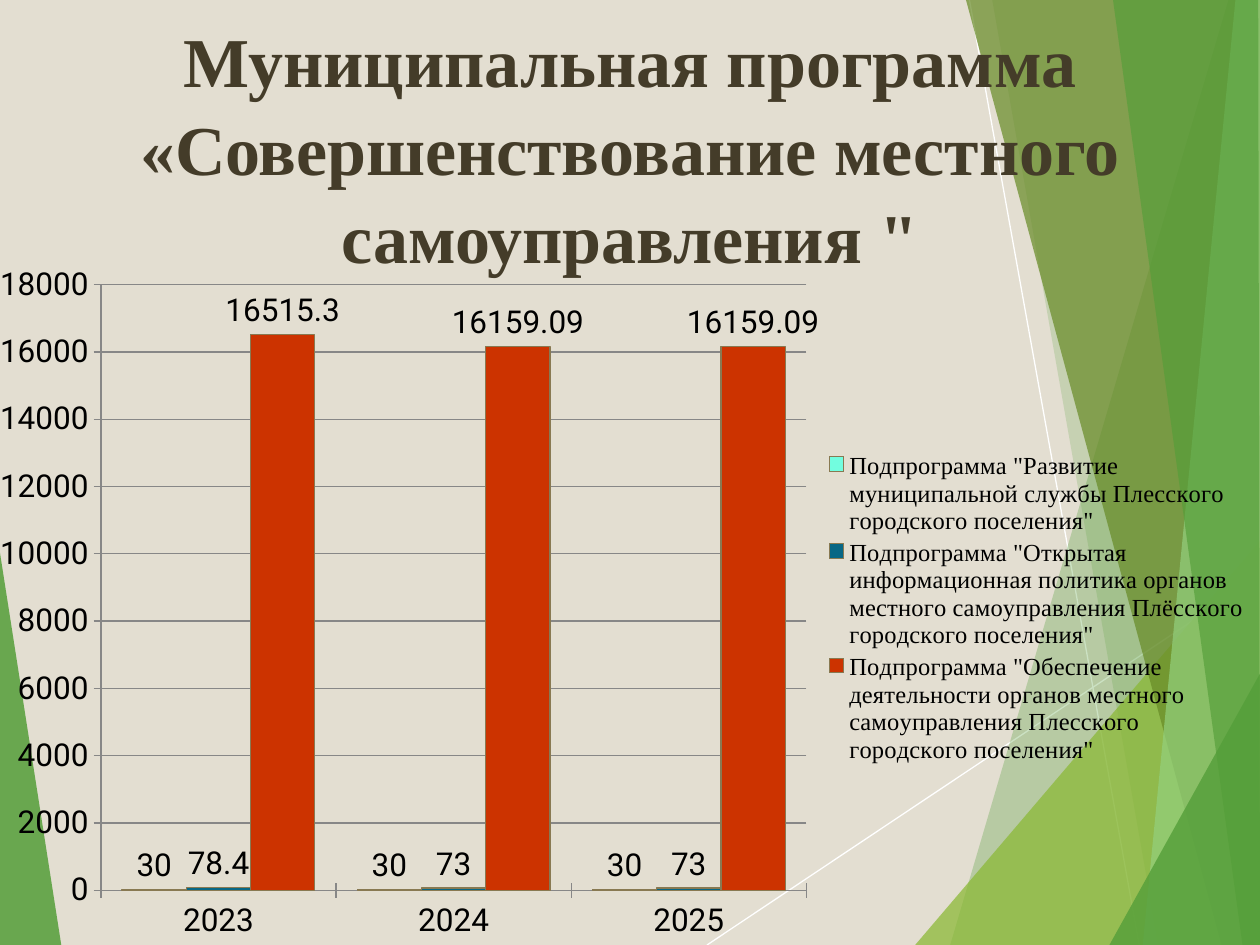
from dataclasses import dataclass

from lxml.etree import SubElement
from pptx import Presentation
from pptx.chart.data import CategoryChartData
from pptx.dml.color import RGBColor
from pptx.enum.chart import XL_CHART_TYPE, XL_LABEL_POSITION, XL_LEGEND_POSITION, XL_TICK_MARK
from pptx.enum.shapes import MSO_CONNECTOR
from pptx.enum.text import MSO_ANCHOR, PP_ALIGN
from pptx.oxml import parse_xml
from pptx.oxml.ns import nsdecls, qn
from pptx.util import Pt


@dataclass(frozen=True)
class Theme:
    background: str = "E3DED1"
    white: str = "FFFFFF"
    green: str = "549E39"
    lime: str = "8AB833"
    olive: str = "678A26"
    light_green: str = "93D07D"
    title: str = "443C29"
    text: str = "000000"
    axis: str = "878787"
    outline: str = "887952"
    series: tuple = ("72FDDF", "076785", "CC3300")
    serif: str = "Times New Roman"
    sans: str = "Roboto"
    title_size: int = 40
    chart_size: int = 18
    legend_size: int = 14


THEME = Theme()
WIDTH, HEIGHT = 720, 540

RAYS = [((404, 540), (720, 329)), ((554, 0), (651, 540))]

# Corner points, colour, opacity in percent
FACETS = [
    ([(0, 316), (35, 540), (0, 540)], THEME.green, 85),
    ([(702, 0), (543, 540), (720, 540), (720, 0)], THEME.green, 30),
    ([(567, 0), (662, 540), (720, 540), (720, 0)], THEME.green, 20),
    ([(523, 540), (720, 309), (720, 540)], THEME.lime, 72),
    ([(552, 0), (698, 540), (720, 540), (720, 0)], THEME.olive, 70),
    ([(706, 0), (653, 540), (720, 540), (720, 0)], THEME.light_green, 70),
    ([(636, 0), (710, 540), (720, 540), (719, 0)], THEME.green, 65),
    ([(634, 540), (720, 385), (720, 540)], THEME.green, 80),
]

YEARS = ["2023", "2024", "2025"]
SUBPROGRAMS = [
    ('Подпрограмма "Развитие муниципальной службы Плесского городского поселения"',
     (30, 30, 30)),
    ('Подпрограмма "Открытая информационная политика органов местного '
     'самоуправления Плёсского городского поселения"', (78.4, 73, 73)),
    ('Подпрограмма "Обеспечение деятельности органов местного самоуправления '
     'Плесского городского поселения"', (16515.3, 16159.09, 16159.09)),
]


def color(value):
    return RGBColor.from_string(value)


def style_font(font, name, size, value, bold=False):
    font.name = name
    font.size = Pt(size)
    font.bold = bold
    font.color.rgb = color(value)


def style_line(line, value):
    line.color.rgb = color(value)
    line.width = Pt(0.75)


def add_ray(slide, start, end):
    ray = slide.shapes.add_connector(
        MSO_CONNECTOR.STRAIGHT, *(Pt(value) for value in start + end))
    style_line(ray.line, THEME.white)
    SubElement(ray._element.spPr, qn("a:effectLst"))


def add_facet(slide, points, fill, opacity):
    builder = slide.shapes.build_freeform(*points[0], scale=Pt(1))
    builder.add_line_segments(points[1:], close=True)
    facet = builder.convert_to_shape()
    facet.shadow.inherit = False
    facet.fill.solid()
    facet.fill.fore_color.rgb = color(fill)
    facet.line.fill.background()
    color_element = facet._element.spPr.find(".//" + qn("a:srgbClr"))
    SubElement(color_element, qn("a:alpha"), val=str(opacity * 1000))


def add_title(slide, text):
    box = slide.shapes.add_textbox(Pt(14), Pt(9), Pt(692), Pt(148))
    text_frame = box.text_frame
    text_frame.word_wrap = True
    text_frame.vertical_anchor = MSO_ANCHOR.MIDDLE
    text_frame.text = text
    paragraph = text_frame.paragraphs[0]
    paragraph.alignment = PP_ALIGN.CENTER
    paragraph.line_spacing = 1.05
    for run in paragraph.runs:
        style_font(run.font, THEME.serif, THEME.title_size, THEME.title, bold=True)


def manual_layout(x, y, width, height, inner=False):
    """Return a c:layout element; values are fractions of the chart."""
    target = '<c:layoutTarget val="inner"/>' if inner else ""
    return parse_xml(
        f'<c:layout {nsdecls("c")}><c:manualLayout>{target}'
        '<c:xMode val="edge"/><c:yMode val="edge"/>'
        f'<c:x val="{x}"/><c:y val="{y}"/><c:w val="{width}"/><c:h val="{height}"/>'
        '</c:manualLayout></c:layout>')


def style_axis(axis):
    axis.major_tick_mark = XL_TICK_MARK.CROSS
    axis.minor_tick_mark = XL_TICK_MARK.NONE
    style_line(axis.format.line, THEME.axis)


def style_series(series, fill):
    series.format.fill.solid()
    series.format.fill.fore_color.rgb = color(fill)
    style_line(series.format.line, THEME.outline)
    labels = series.data_labels
    labels.show_value = True
    labels.position = XL_LABEL_POSITION.OUTSIDE_END


def add_legend(chart):
    chart.has_legend = True
    legend = chart.legend
    legend.position = XL_LEGEND_POSITION.RIGHT
    legend.include_in_layout = False
    style_font(legend.font, THEME.serif, THEME.legend_size, THEME.text)
    element = legend._element
    for layout in element.findall(qn("c:layout")):
        element.remove(layout)
    element.find(qn("c:legendPos")).addnext(manual_layout(0.67, 0.27, 0.33, 0.47))


def add_budget_chart(slide):
    data = CategoryChartData()
    data.categories = YEARS
    for name, values in SUBPROGRAMS:
        data.add_series(name, values)
    chart = slide.shapes.add_chart(
        XL_CHART_TYPE.COLUMN_CLUSTERED, Pt(0), Pt(151), Pt(WIDTH), Pt(389), data).chart
    chart.has_title = False
    style_font(chart.font, THEME.sans, THEME.chart_size, THEME.text)

    plot = chart.plots[0]
    plot.gap_width = 66
    plot.overlap = 0
    plot.vary_by_categories = False
    for series, fill in zip(plot.series, THEME.series):
        style_series(series, fill)

    value_axis = chart.value_axis
    value_axis.minimum_scale, value_axis.maximum_scale = 0, 18000
    value_axis.major_unit = 2000
    style_axis(value_axis)
    style_line(value_axis.major_gridlines.format.line, THEME.axis)
    style_axis(chart.category_axis)

    add_legend(chart)
    plot_area = chart._chartSpace.chart.plotArea
    for layout in plot_area.findall(qn("c:layout")):
        plot_area.remove(layout)
    plot_area.insert(0, manual_layout(0.08, 0.03, 0.56, 0.89, inner=True))


def main():
    presentation = Presentation()
    presentation.slide_width, presentation.slide_height = Pt(WIDTH), Pt(HEIGHT)
    slide = presentation.slides.add_slide(presentation.slide_layouts[6])
    slide.background.fill.solid()
    slide.background.fill.fore_color.rgb = color(THEME.background)
    for start, end in RAYS:
        add_ray(slide, start, end)
    for points, fill, opacity in FACETS:
        add_facet(slide, points, fill, opacity)
    add_title(slide, 'Муниципальная программа\v«Совершенствование местного самоуправления "')
    add_budget_chart(slide)
    presentation.save("out.pptx")


if __name__ == "__main__":
    main()
